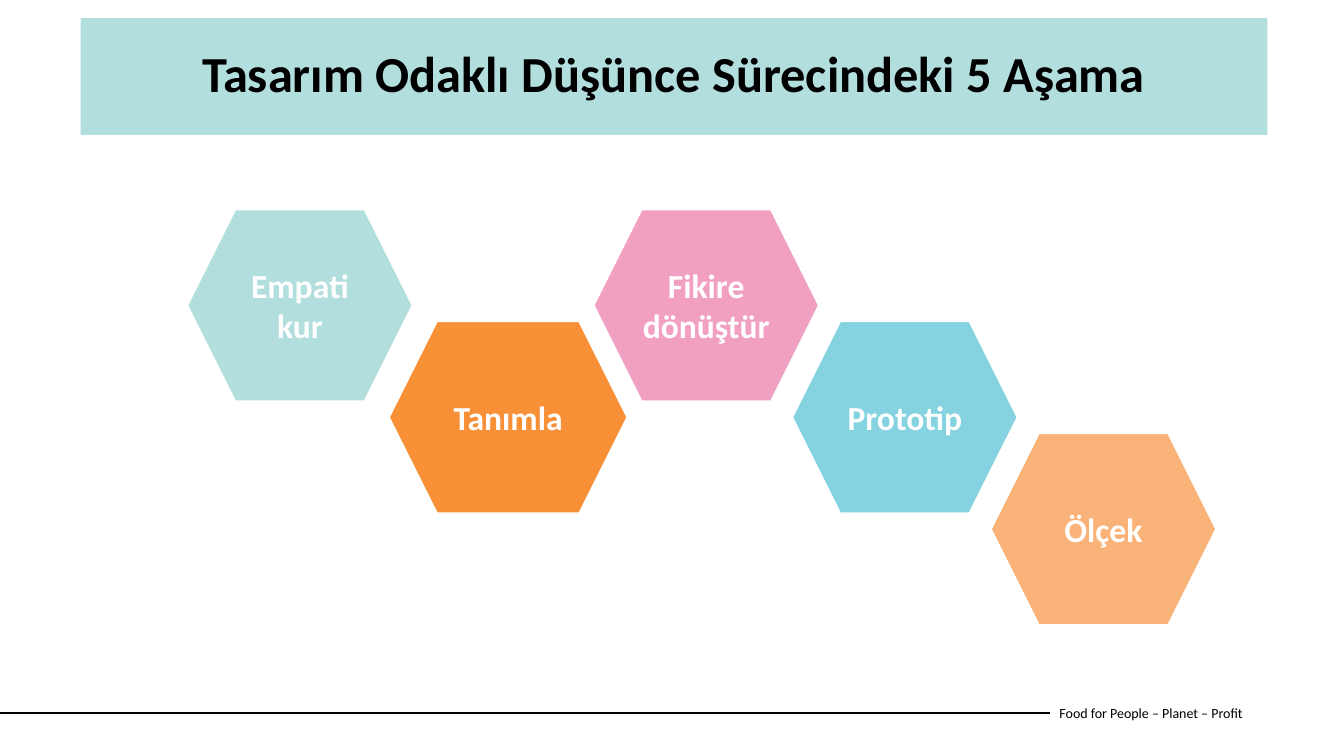
from lxml.etree import SubElement
from pptx import Presentation
from pptx.dml.color import RGBColor
from pptx.enum.shapes import MSO_CONNECTOR as Connector, MSO_SHAPE as Shape
from pptx.enum.text import MSO_ANCHOR as Anchor, PP_ALIGN as Align
from pptx.oxml.ns import qn
from pptx.util import Inches, Pt

BLACK = RGBColor(0x00, 0x00, 0x00)
WHITE = RGBColor(0xFF, 0xFF, 0xFF)
MINT = RGBColor(0xB2, 0xDE, 0xDD)
ORANGE = RGBColor(0xF7, 0x90, 0x37)
PINK = RGBColor(0xF1, 0xA0, 0xC2)
BLUE = RGBColor(0x85, 0xD2, 0xE1)
PEACH = RGBColor(0xF9, 0xB2, 0x77)

FONT = "Calibri"
STAGE_TOP = 2.08
STAGE_STEP = 1.11
STAGE_HEIGHT = 1.9
STAGES = [
    ("Empati kur", 1.86, 0, 2.23, MINT),
    ("Tanımla", 3.86, 1, 2.36, ORANGE),
    ("Fikire dönüştür", 5.89, 0, 2.23, PINK),
    ("Prototip", 7.86, 1, 2.23, BLUE),
    ("Ölçek", 9.83, 2, 2.23, PEACH),
]


def write_text(shape, text, size, color, bold=False, align=Align.CENTER):
    frame = shape.text_frame
    frame.word_wrap = True
    frame.vertical_anchor = Anchor.MIDDLE
    frame.text = text
    para = frame.paragraphs[0]
    para.alignment = align
    font = para.runs[0].font
    font.name = FONT
    font.size = Pt(size)
    font.bold = bold
    font.color.rgb = color
    return para


def add_filled_shape(page, kind, left, top, width, height, fill):
    shape = page.shapes.add_shape(
        kind, Inches(left), Inches(top), Inches(width), Inches(height)
    )
    shape.shadow.inherit = False
    shape.fill.solid()
    shape.fill.fore_color.rgb = fill
    return shape


def add_title(page, text):
    banner = add_filled_shape(page, Shape.RECTANGLE, 0.8, 0.18, 11.77, 1.16, MINT)
    banner.line.fill.background()
    para = write_text(banner, text, 36, BLACK, bold=True)
    para.line_spacing = 0.9
    para.space_before = Pt(10)


def add_stage(page, label, left, level, width, fill):
    top = STAGE_TOP + level * STAGE_STEP
    hexagon = add_filled_shape(
        page, Shape.HEXAGON, left, top, width, STAGE_HEIGHT, fill
    )
    hexagon.line.color.rgb = WHITE
    hexagon.line.width = Pt(1)
    write_text(hexagon, label, 24, WHITE, bold=True)


def add_footer(page, text):
    box = page.shapes.add_textbox(
        Inches(10.41), Inches(6.87), Inches(2.73), Inches(0.4)
    )
    write_text(box, text, 10, BLACK, align=Align.LEFT)
    rule = page.shapes.add_connector(
        Connector.STRAIGHT, Inches(0), Inches(7.07), Inches(10.41), Inches(7.07)
    )
    rule.line.color.rgb = BLACK
    rule.line.width = Pt(1.5)
    SubElement(rule._element.spPr, qn("a:effectLst"))
    rule.end_connect(box, 1)


def main():
    deck = Presentation()
    deck.slide_width = Inches(13.33)
    deck.slide_height = Inches(7.5)
    page = deck.slides.add_slide(deck.slide_layouts[6])
    add_footer(page, "Food for People – Planet – Profit")
    add_title(page, "Tasarım Odaklı Düşünce Sürecindeki 5 Aşama")
    for stage in STAGES:
        add_stage(page, *stage)
    deck.save("out.pptx")


if __name__ == "__main__":
    main()
